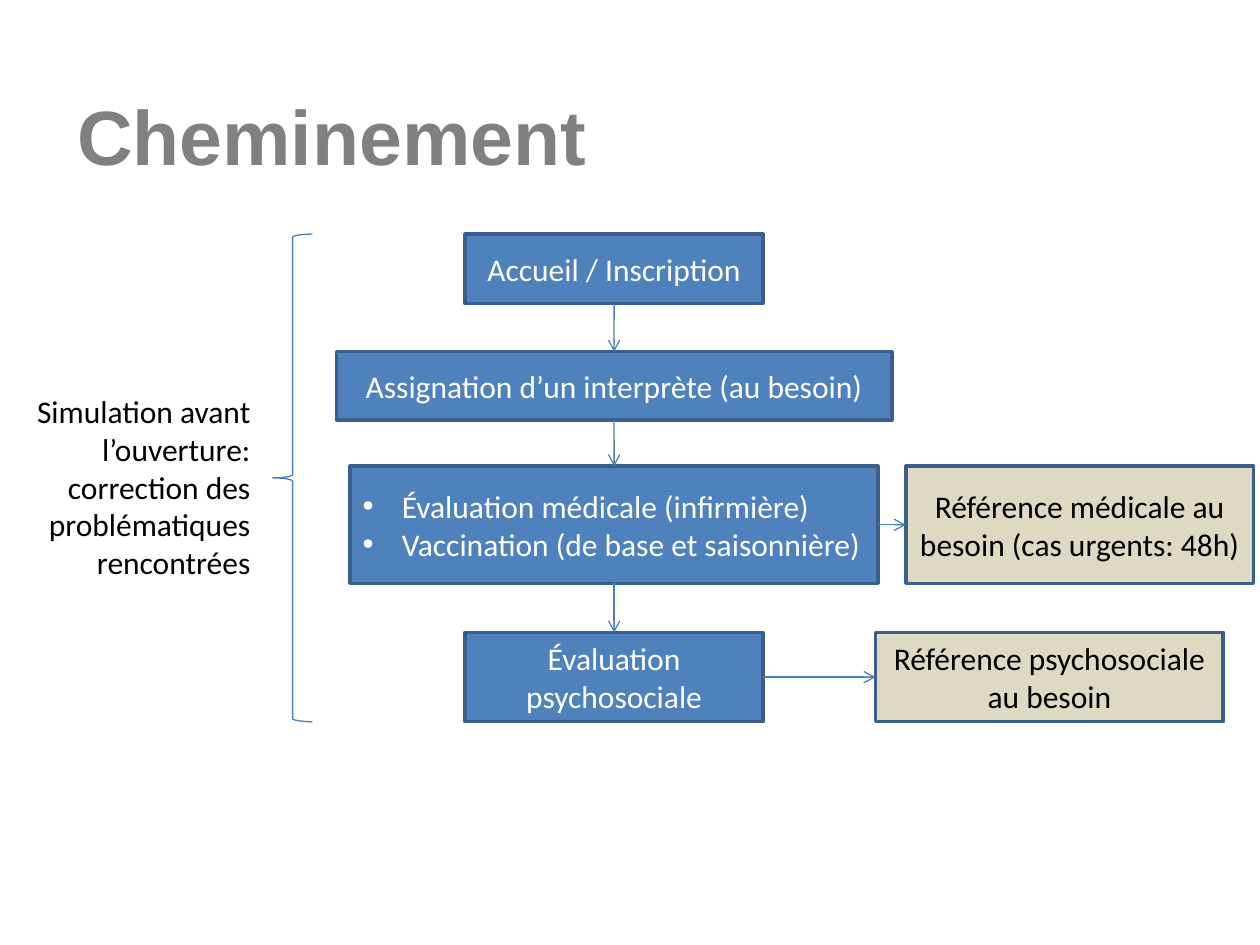
from dataclasses import dataclass

from lxml import etree
from pptx import Presentation
from pptx.dml.color import RGBColor
from pptx.enum.shapes import MSO_CONNECTOR, MSO_SHAPE
from pptx.enum.text import MSO_ANCHOR, PP_ALIGN
from pptx.oxml.ns import qn
from pptx.util import Cm, Pt

PROCESS = MSO_SHAPE.FLOWCHART_PROCESS
LEFT_BRACE = MSO_SHAPE.LEFT_BRACE
STRAIGHT = MSO_CONNECTOR.STRAIGHT
MIDDLE = MSO_ANCHOR.MIDDLE
LEFT, CENTER, RIGHT = PP_ALIGN.LEFT, PP_ALIGN.CENTER, PP_ALIGN.RIGHT
TOP_SIDE, LEFT_SIDE, BOTTOM_SIDE, RIGHT_SIDE = range(4)


@dataclass(frozen=True)
class Theme:
    heading: RGBColor = RGBColor(0x80, 0x80, 0x80)
    step: RGBColor = RGBColor(0x4F, 0x81, 0xBD)
    reference: RGBColor = RGBColor(0xDD, 0xD9, 0xC3)
    border: RGBColor = RGBColor(0x3A, 0x5F, 0x8C)
    line: RGBColor = RGBColor(0x4B, 0x7E, 0xBC)
    light: RGBColor = RGBColor(0xFF, 0xFF, 0xFF)
    dark: RGBColor = RGBColor(0, 0, 0)
    heading_font: str = "Arial"
    body_font: str = "Calibri"
    heading_size: float = 44
    body_size: float = 18
    border_width: float = 2
    line_width: float = 0.75


def add_bullet(para, indent):
    props = para._p.get_or_add_pPr()
    props.set("marL", str(indent))
    props.set("indent", str(-indent))
    etree.SubElement(props, qn("a:buFont")).set("typeface", "Arial")
    etree.SubElement(props, qn("a:buChar")).set("char", "•")


def write(frame, text, *, font, size, color, bold=False, align=LEFT, bullets=False):
    """Fill a text frame, one paragraph for each line of the text."""
    frame.word_wrap = True
    frame.vertical_anchor = MIDDLE
    frame.text = text
    for para in frame.paragraphs:
        para.alignment = align
        if bullets:
            add_bullet(para, Cm(0.79))
        for span in para.runs:
            span.font.name = font
            span.font.size = Pt(size)
            span.font.bold = bold
            span.font.color.rgb = color


class FlowPage:
    """Holds the theme and the slide being drawn; lengths are in centimetres."""

    def __init__(self, page, theme):
        self.page = page
        self.theme = theme

    def title(self, text, left, top, width, height):
        title = self.page.shapes.title
        title.left, title.top = Cm(left), Cm(top)
        title.width, title.height = Cm(width), Cm(height)
        theme = self.theme
        write(title.text_frame, text, font=theme.heading_font,
              size=theme.heading_size, color=theme.heading, bold=True)

    def shape(self, kind, left, top, width, height, *, fill=None, line=None, weight=0):
        shape = self.page.shapes.add_shape(
            kind, Cm(left), Cm(top), Cm(width), Cm(height))
        shape.shadow.inherit = False
        if fill is None:
            shape.fill.background()
        else:
            shape.fill.solid()
            shape.fill.fore_color.rgb = fill
        if line is None:
            shape.line.fill.background()
        else:
            shape.line.color.rgb = line
            shape.line.width = Pt(weight)
        return shape

    def box(self, text, left, top, width, height, *, fill, color, **text_format):
        theme = self.theme
        box = self.shape(PROCESS, left, top, width, height, fill=fill,
                         line=theme.border, weight=theme.border_width)
        write(box.text_frame, text, font=theme.body_font,
              size=theme.body_size, color=color, **text_format)
        return box

    def note(self, text, left, top, width, height):
        theme = self.theme
        note = self.shape(PROCESS, left, top, width, height)
        write(note.text_frame, text, font=theme.body_font,
              size=theme.body_size, color=theme.dark, align=RIGHT)

    def brace(self, left, top, width, height):
        self.shape(LEFT_BRACE, left, top, width, height,
                   line=self.theme.line, weight=self.theme.line_width)

    def arrow(self, start, start_side, end, end_side):
        arrow = self.page.shapes.add_connector(STRAIGHT, 0, 0, 0, 0)
        arrow.begin_connect(start, start_side)
        arrow.end_connect(end, end_side)
        arrow.line.color.rgb = self.theme.line
        arrow.line.width = Pt(self.theme.line_width)
        head = etree.SubElement(arrow.line._get_or_add_ln(), qn("a:tailEnd"))
        head.set("type", "arrow")
        etree.SubElement(arrow._element.spPr, qn("a:effectLst"))


def main():
    deck = Presentation()
    deck.slide_width, deck.slide_height = Cm(25.4), Cm(19.05)
    theme = Theme()
    flow = FlowPage(deck.slides.add_slide(deck.slide_layouts[5]), theme)
    flow.title("Cheminement", 1.3, 1.12, 22.86, 3.18)

    # Steps share one vertical axis: text, top, width, height, format
    axis = 12.38
    centered, listed = {"align": CENTER}, {"bullets": True}
    rows = [
        ("Accueil / Inscription", 4.72, 6, 1.4, centered),
        ("Assignation d’un interprète (au besoin)", 7.09, 11.2, 1.38, centered),
        ("Évaluation médicale (infirmière)\nVaccination (de base et saisonnière)",
         9.4, 10.64, 2.36, listed),
        ("Évaluation psychosociale", 12.75, 6, 1.8, centered),
    ]
    steps = [
        flow.box(text, axis - width / 2, top, width, height,
                 fill=theme.step, color=theme.light, **text_format)
        for text, top, width, height, text_format in rows
    ]
    for upper, lower in zip(steps, steps[1:]):
        flow.arrow(upper, BOTTOM_SIDE, lower, TOP_SIDE)

    # Each reference lines up with the step of the given index
    references = [
        (2, "Référence médicale au besoin (cas urgents: 48h)", 18.26),
        (3, "Référence psychosociale au besoin", 17.65),
    ]
    for index, text, left in references:
        top, height = rows[index][1], rows[index][3]
        reference = flow.box(text, left, top, 7.01, height, fill=theme.reference,
                             color=theme.dark, align=CENTER)
        flow.arrow(steps[index], RIGHT_SIDE, reference, LEFT_SIDE)

    flow.note("Simulation avant l’ouverture: correction des problématiques rencontrées",
              0.1, 7.21, 5.2, 5.2)
    flow.brace(5.5, 4.72, 0.8, 9.83)
    deck.save("out.pptx")


if __name__ == "__main__":
    main()
